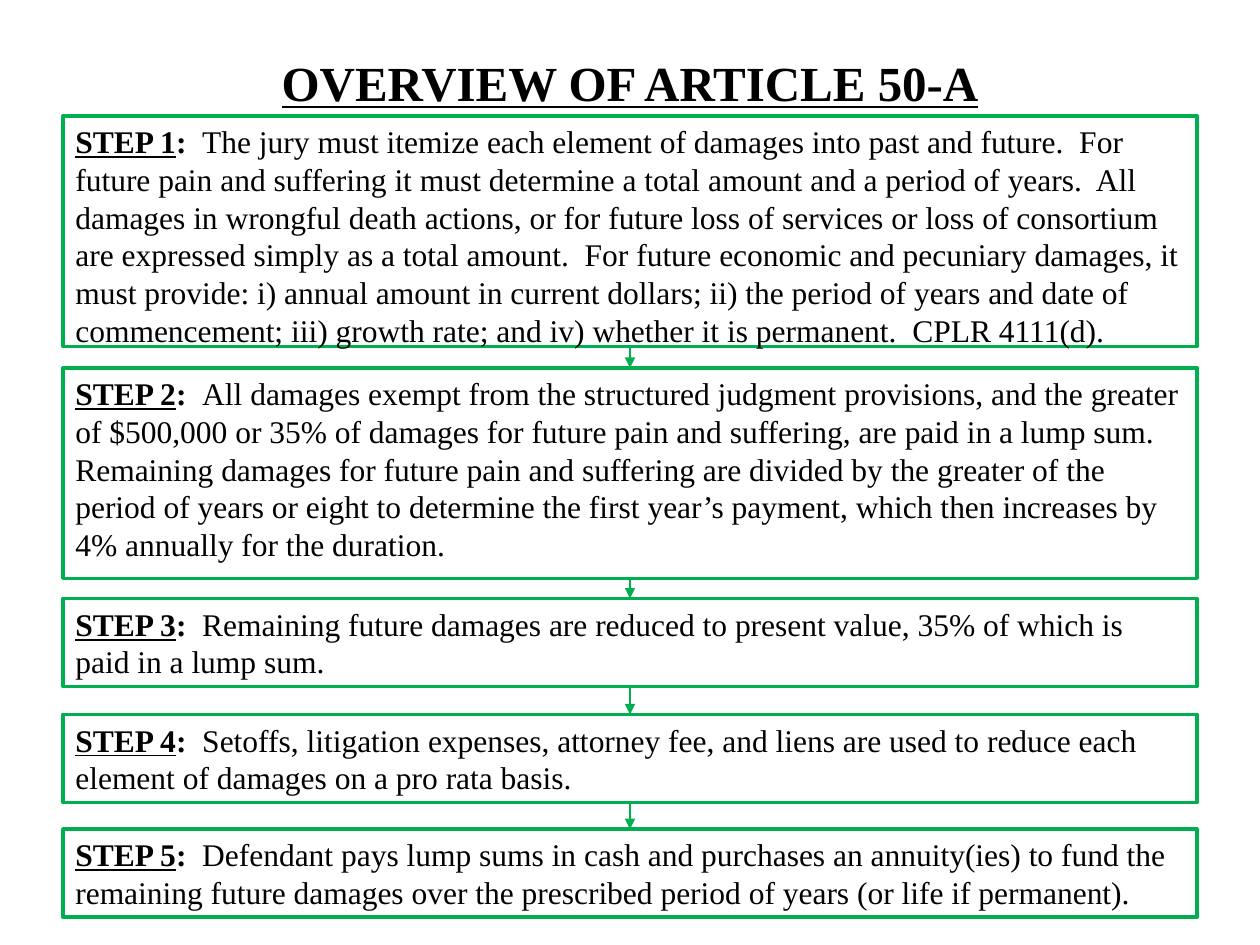
from dataclasses import dataclass

from lxml import etree
from pptx import Presentation
from pptx.dml.color import RGBColor
from pptx.enum.shapes import MSO_CONNECTOR, MSO_SHAPE
from pptx.enum.text import MSO_ANCHOR, PP_ALIGN
from pptx.oxml.ns import qn
from pptx.util import Inches, Pt

RECTANGLE = MSO_SHAPE.RECTANGLE
STRAIGHT = MSO_CONNECTOR.STRAIGHT
TOP, MIDDLE = MSO_ANCHOR.TOP, MSO_ANCHOR.MIDDLE
LEFT, CENTER = PP_ALIGN.LEFT, PP_ALIGN.CENTER


@dataclass(frozen=True)
class Theme:
    font: str = "Times New Roman"
    text: RGBColor = RGBColor(0, 0, 0)
    fill: RGBColor = RGBColor(255, 255, 255)
    border: RGBColor = RGBColor(0, 176, 80)
    title_size: int = 28
    body_size: int = 18
    border_width: float = 2
    arrow_width: float = 1.5


THEME = Theme()


def add_text(paragraph, text, size=THEME.body_size, bold=False, underline=False):
    run = paragraph.add_run()
    run.text = text
    run.font.name = THEME.font
    run.font.size = Pt(size)
    run.font.color.rgb = THEME.text
    run.font.bold = bold
    run.font.underline = underline


presentation = Presentation()
presentation.slide_width = Inches(10)
presentation.slide_height = Inches(7.5)
slide = presentation.slides.add_slide(presentation.slide_layouts[5])

title = slide.shapes.title
title.left, title.top = Inches(0.5), Inches(0.3)
title.width, title.height = Inches(9), Inches(0.7)
title.text_frame.vertical_anchor = MIDDLE
title_paragraph = title.text_frame.paragraphs[0]
title_paragraph.alignment = CENTER
add_text(title_paragraph, "OVERVIEW OF ARTICLE 50-A",
         size=THEME.title_size, bold=True, underline=True)

steps = [
    (0.92, 1.83,
     "The jury must itemize each element of damages into past and future.  "
     "For future pain and suffering it must determine a total amount and a "
     "period of years.  All damages in wrongful death actions, or for future "
     "loss of services or loss of consortium are expressed simply as a total "
     "amount.  For future economic and pecuniary damages, it must provide: "
     "i) annual amount in current dollars; ii) the period of years and date "
     "of commencement; iii) growth rate; and iv) whether it is permanent.  "
     "CPLR 4111(d)."),
    (2.92, 1.67,
     "All damages exempt from the structured judgment provisions, and the "
     "greater of $500,000 or 35% of damages for future pain and suffering, "
     "are paid in a lump sum.  Remaining damages for future pain and "
     "suffering are divided by the greater of the period of years or eight "
     "to determine the first year’s payment, which then increases by 4% "
     "annually for the duration."),
    (4.75, 0.7,
     "Remaining future damages are reduced to present value, 35% of which is "
     "paid in a lump sum."),
    (5.67, 0.7,
     "Setoffs, litigation expenses, attorney fee, and liens are used to "
     "reduce each element of damages on a pro rata basis."),
    (6.58, 0.7,
     "Defendant pays lump sums in cash and purchases an annuity(ies) to fund "
     "the remaining future damages over the prescribed period of years (or "
     "life if permanent)."),
]

previous_bottom = None
for number, (top, height, description) in enumerate(steps, start=1):
    box = slide.shapes.add_shape(
        RECTANGLE, Inches(0.5), Inches(top), Inches(9), Inches(height))
    box.shadow.inherit = False
    box.fill.solid()
    box.fill.fore_color.rgb = THEME.fill
    box.line.color.rgb = THEME.border
    box.line.width = Pt(THEME.border_width)
    box.text_frame.word_wrap = True
    box.text_frame.vertical_anchor = TOP
    paragraph = box.text_frame.paragraphs[0]
    paragraph.alignment = LEFT
    add_text(paragraph, f"STEP {number}", bold=True, underline=True)
    add_text(paragraph, ":  ", bold=True)
    add_text(paragraph, description)

    if previous_bottom is not None:
        arrow = slide.shapes.add_connector(
            STRAIGHT, Inches(5), previous_bottom, Inches(5), box.top)
        arrow.line.color.rgb = THEME.border
        arrow.line.width = Pt(THEME.arrow_width)
        line = arrow.line._get_or_add_ln()
        etree.SubElement(line, qn("a:tailEnd"), type="triangle")
        etree.SubElement(arrow._element.spPr, qn("a:effectLst"))
    previous_bottom = box.top + box.height

presentation.save("out.pptx")
